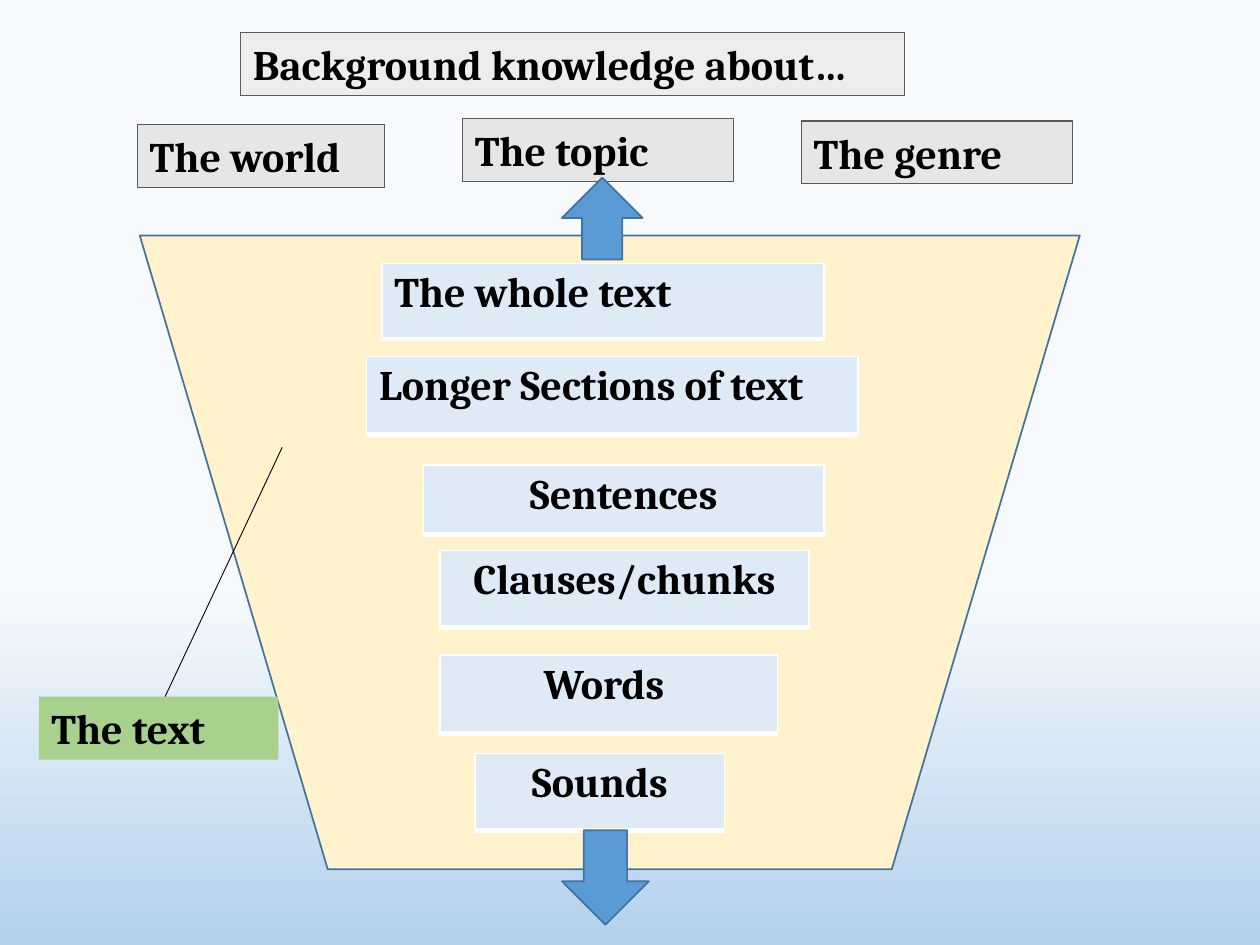
from lxml import etree
from pptx import Presentation
from pptx.dml.color import RGBColor
from pptx.enum.shapes import MSO_CONNECTOR, MSO_SHAPE
from pptx.enum.text import MSO_ANCHOR, MSO_AUTO_SIZE, PP_ALIGN
from pptx.oxml.ns import qn
from pptx.util import Inches, Pt

LEFT, CENTER = PP_ALIGN.LEFT, PP_ALIGN.CENTER
RECT = MSO_SHAPE.RECTANGLE
FUNNEL = MSO_SHAPE.FLOWCHART_MANUAL_OPERATION
UP, DOWN = MSO_SHAPE.UP_ARROW, MSO_SHAPE.DOWN_ARROW

COLORS = {
    "sky": "F7FAFD", "horizon": "B5D2EC",
    "funnel": "FFF2CC", "arrow": "5B9BD5", "outline": "43739E",
    "level": "DEEBF7", "level_border": "FFFFFF",
    "title": "EDEDED", "topic": "E7E6E6", "topic_border": "595959",
    "text_label": "A9D18E", "ink": "000000",
}
LABEL_HEIGHT = 0.5
# Left and top relative to the funnel, then width and height
LEVELS = [
    ("The whole text", LEFT, (1.92, 0.22, 3.51, 0.6)),
    ("Longer Sections of text", LEFT, (1.8, 0.96, 3.9, 0.62)),
    ("Sentences", CENTER, (2.25, 1.82, 3.18, 0.55)),
    ("Clauses/chunks", CENTER, (2.38, 2.5, 2.93, 0.61)),
    ("Words ", CENTER, (2.38, 3.33, 2.68, 0.62)),
    ("Sounds", CENTER, (2.66, 4.11, 1.98, 0.61)),
]
# Left and top relative to the knowledge region, then width
TOPICS = [
    ("The world", 0, 0.73, 1.96),
    ("The topic", 2.58, 0.68, 2.15),
    ("The genre", 5.27, 0.7, 2.15),
]


def rgb(name):
    return RGBColor.from_string(COLORS[name])


def style_text(paragraph, text, align=LEFT):
    paragraph.text = text
    paragraph.alignment = align
    font = paragraph.font
    font.name, font.size, font.bold = "Cambria", Pt(24), True
    font.color.rgb = rgb("ink")


def add_block(slide, kind, box, fill, border=None, border_width=1):
    block = slide.shapes.add_shape(kind, *map(Inches, box))
    block.shadow.inherit = False
    block.fill.solid()
    block.fill.fore_color.rgb = rgb(fill)
    if border:
        block.line.color.rgb = rgb(border)
        block.line.width = Pt(border_width)
    else:
        block.line.fill.background()
    return block


def add_label(slide, text, left, top, width, fill, border=None):
    label = add_block(slide, RECT, (left, top, width, LABEL_HEIGHT), fill, border, 0.75)
    frame = label.text_frame
    frame.word_wrap = True
    frame.auto_size = MSO_AUTO_SIZE.SHAPE_TO_FIT_TEXT
    frame.vertical_anchor = MSO_ANCHOR.TOP
    style_text(frame.paragraphs[0], text)


def add_level(slide, text, align, box):
    """One-cell table with a white frame that is thicker at the bottom."""
    table = slide.shapes.add_table(1, 1, *map(Inches, box)).table
    table.first_row = table.horz_banding = False
    cell = table.cell(0, 0)
    properties = cell._tc.get_or_add_tcPr()
    for side, points in (("L", 1), ("R", 1), ("T", 1), ("B", 3)):
        edge = etree.SubElement(properties, qn(f"a:ln{side}"), w=str(Pt(points)))
        paint = etree.SubElement(edge, qn("a:solidFill"))
        etree.SubElement(paint, qn("a:srgbClr"), val=COLORS["level_border"])
    cell.fill.solid()
    cell.fill.fore_color.rgb = rgb("level")
    style_text(cell.text_frame.paragraphs[0], text, align)


def paint_background(slide):
    fill = slide.background.fill
    fill.gradient()
    fill.gradient_angle = 270
    for stop, position, color in zip(fill.gradient_stops, (0.62, 0.99), ("sky", "horizon")):
        stop.position = position
        stop.color.rgb = rgb(color)


def add_funnel(slide, left, top, width, height):
    add_block(slide, FUNNEL, (left, top, width, height), "funnel", "outline")
    for text, align, (dx, dy, level_width, level_height) in LEVELS:
        add_level(slide, text, align, (left + dx, top + dy, level_width, level_height))


def add_text_callout(slide, left, top, width, height):
    """Label at the bottom left with a leader line up into the funnel."""
    label_top = top + height - LABEL_HEIGHT
    leader = slide.shapes.add_connector(
        MSO_CONNECTOR.STRAIGHT,
        *map(Inches, (left + width + 0.03, top, left + 1, label_top)))
    leader.line.color.rgb = rgb("ink")
    leader.line.width = Pt(0.5)
    etree.SubElement(leader._element.spPr, qn("a:effectLst"))
    add_label(slide, "The text", left, label_top, width, "text_label")


def add_knowledge(slide, left, top):
    for text, dx, dy, width in TOPICS:
        add_label(slide, text, left + dx, top + dy, width, "topic", "topic_border")
    add_label(slide, "Background knowledge about…", left + 0.82, top, 5.27,
              "title", "topic_border")


def add_arrows(slide, left, top):
    add_block(slide, UP, (left, top, 0.64, 0.65), "arrow", "outline")
    add_block(slide, DOWN, (left, top + 5.18, 0.69, 0.75), "arrow", "outline")


def main():
    deck = Presentation()
    deck.slide_width, deck.slide_height = Inches(10), Inches(7.5)
    slide = deck.slides.add_slide(deck.slide_layouts[6])
    paint_background(slide)
    add_funnel(slide, 1.11, 1.87, 7.46, 5.03)
    add_text_callout(slide, 0.31, 3.55, 1.9, 2.48)
    add_knowledge(slide, 1.09, 0.26)
    add_arrows(slide, 4.46, 1.41)
    deck.save("out.pptx")


if __name__ == "__main__":
    main()
